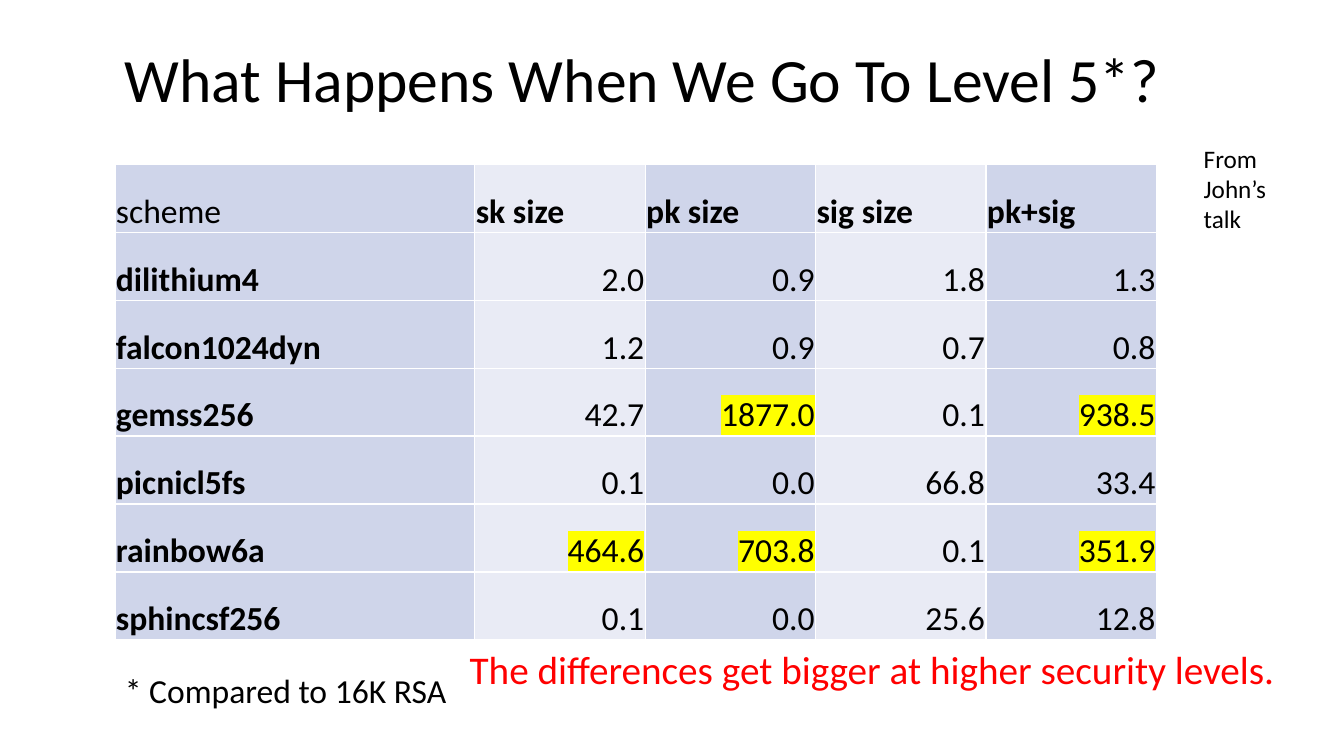
from dataclasses import dataclass

from lxml.etree import SubElement
from pptx import Presentation
from pptx.dml.color import RGBColor as Color
from pptx.enum.text import MSO_ANCHOR as Anchor, PP_ALIGN as Align
from pptx.oxml import parse_xml
from pptx.oxml.ns import nsdecls, qn
from pptx.util import Inches, Pt

HEADERS = ["scheme", "sk size", "pk size", "sig size", "pk+sig"]
SCHEMES = [
    ("dilithium4", 2.0, 0.9, 1.8, 1.3),
    ("falcon1024dyn", 1.2, 0.9, 0.7, 0.8),
    ("gemss256", 42.7, 1877.0, 0.1, 938.5),
    ("picnicl5fs", 0.1, 0.0, 66.8, 33.4),
    ("rainbow6a", 464.6, 703.8, 0.1, 351.9),
    ("sphincsf256", 0.1, 0.0, 25.6, 12.8),
]
HIGHLIGHT_ABOVE = 100


@dataclass(frozen=True)
class Theme:
    font: str = "Calibri"
    text: str = "000000"
    alert: str = "FF0000"
    marker: str = "FFFF00"
    border: str = "FFFFFF"
    bands: tuple = ("CFD5EA", "E9EBF5")
    title: int = 44
    takeaway: int = 28
    body: int = 24
    source: int = 18


THEME = Theme()

# text, (left, top, width, height), format
TEXTS = [
    ("What Happens When We Go To Level 5*?", (1.14, 0.09, 11.5, 1.45),
     {"size": THEME.title, "anchor": Anchor.MIDDLE, "spacing": 0.9}),
    ("* Compared to 16K RSA", (1.14, 6.6, 3.42, 0.5),
     {"size": THEME.body, "wrap": False}),
    ("From John’s talk", (11.84, 1.37, 1.08, 1.01), {"size": THEME.source}),
    ("The differences get bigger at higher security levels.",
     (4.56, 6.35, 8.78, 0.57), {"size": THEME.takeaway, "color": THEME.alert}),
]
TABLE_LEFT, TABLE_TOP, TABLE_HEIGHT = 1.14, 1.63, 4.72
COLUMN_WIDTHS = [3.57] + [1.69] * 4


def set_all(target, values):
    for name, value in values.items():
        setattr(target, name, value)


def write(para, text, size, color=THEME.text, bold=False):
    span = para.add_run()
    span.text = text
    set_all(span.font, {"name": THEME.font, "size": Pt(size), "bold": bold})
    span.font.color.rgb = Color.from_string(color)
    return span


def add_text(page, text, place, size, color=THEME.text, anchor=Anchor.TOP,
             spacing=1.0, wrap=True):
    box = page.shapes.add_textbox(*map(Inches, place))
    frame = box.text_frame
    set_all(frame, {"word_wrap": wrap, "vertical_anchor": anchor})
    para = frame.paragraphs[0]
    para.line_spacing = spacing
    write(para, text, size, color)


def highlight(span):
    """Mark the run; the schema wants the highlight right after the fill."""
    mark = parse_xml(f'<a:highlight {nsdecls("a")}>'
                     f'<a:srgbClr val="{THEME.marker}"/></a:highlight>')
    span.font._element.find(qn("a:solidFill")).addnext(mark)


def add_borders(cell):
    properties = cell._tc.get_or_add_tcPr()
    for side in ("lnL", "lnR", "lnT", "lnB"):
        line = SubElement(properties, qn(f"a:{side}"), w=str(Pt(1)))
        fill = SubElement(line, qn("a:solidFill"))
        SubElement(fill, qn("a:srgbClr"), val=THEME.border)


def fill_cell(cell, value, row, column):
    is_number = isinstance(value, float)
    set_all(cell, {
        "vertical_anchor": Anchor.BOTTOM,
        "margin_left": Inches(0.01), "margin_right": Inches(0.01),
        "margin_top": Inches(0.01), "margin_bottom": 0,
    })
    add_borders(cell)
    cell.fill.solid()
    cell.fill.fore_color.rgb = Color.from_string(THEME.bands[column % 2])
    para = cell.text_frame.paragraphs[0]
    para.alignment = Align.RIGHT if is_number else Align.LEFT
    is_corner = row == column == 0
    span = write(para, f"{value:.1f}" if is_number else value, THEME.body,
                 bold=not is_number and not is_corner)
    if is_number and value > HIGHLIGHT_ABOVE:
        highlight(span)


def add_size_table(page):
    rows = [HEADERS, *SCHEMES]
    place = (TABLE_LEFT, TABLE_TOP, sum(COLUMN_WIDTHS), TABLE_HEIGHT)
    table = page.shapes.add_table(len(rows), len(HEADERS),
                                  *map(Inches, place)).table
    set_all(table, {"first_row": False, "horz_banding": False})
    for column, width in zip(table.columns, COLUMN_WIDTHS):
        column.width = Inches(width)
    for row, values in enumerate(rows):
        for column, value in enumerate(values):
            fill_cell(table.cell(row, column), value, row, column)


def main():
    deck = Presentation()
    set_all(deck, {"slide_width": Inches(13.33), "slide_height": Inches(7.5)})
    page = deck.slides.add_slide(deck.slide_layouts[6])
    add_size_table(page)
    for text, place, style in TEXTS:
        add_text(page, text, place, **style)
    deck.save("out.pptx")


if __name__ == "__main__":
    main()
